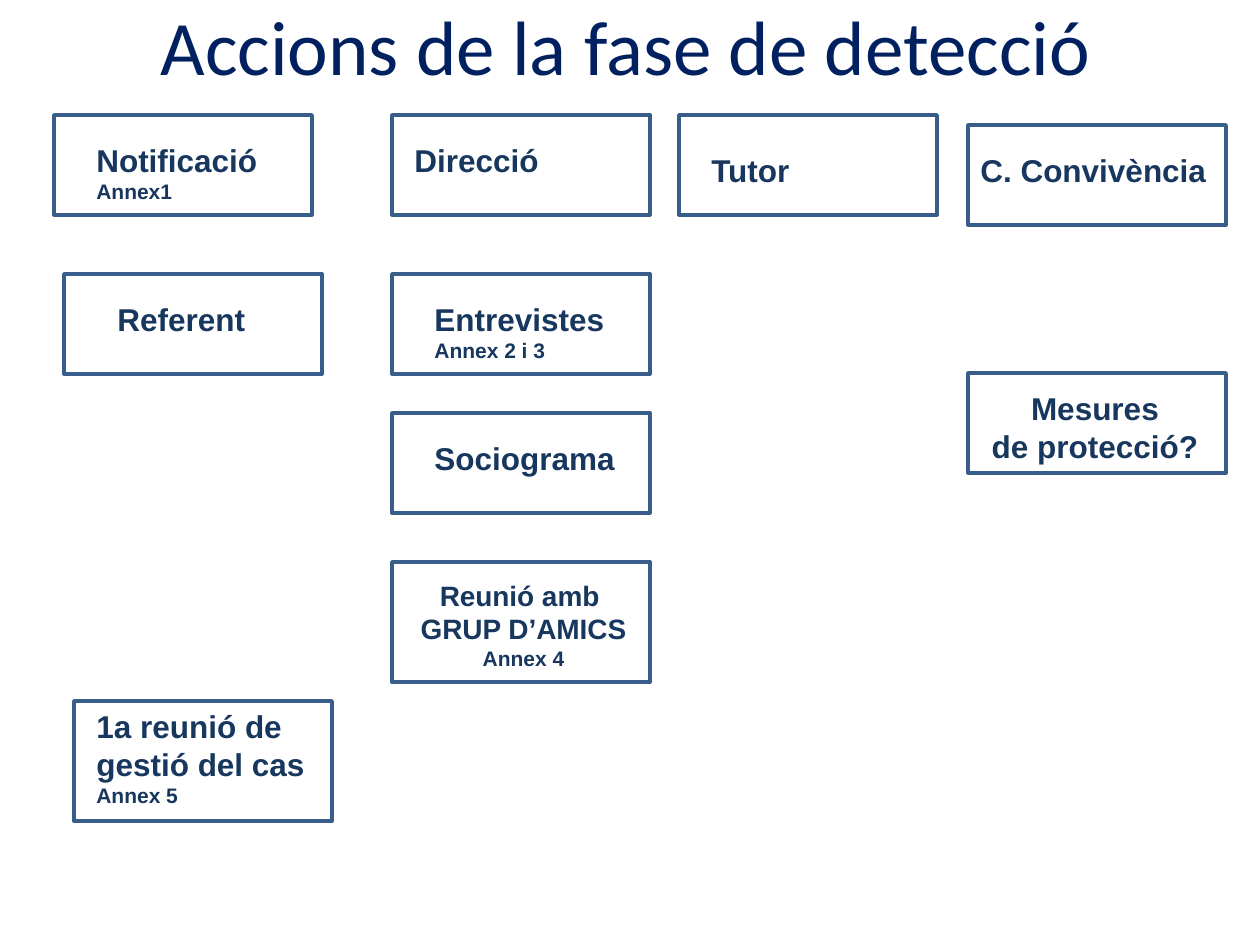
from pptx import Presentation
from pptx.dml.color import RGBColor
from pptx.enum.shapes import MSO_SHAPE
from pptx.enum.text import MSO_ANCHOR, PP_ALIGN
from pptx.util import Inches, Pt

RECTANGLE = MSO_SHAPE.RECTANGLE
MIDDLE = MSO_ANCHOR.MIDDLE
LEFT, CENTER = PP_ALIGN.LEFT, PP_ALIGN.CENTER
BORDER_BLUE = RGBColor(0x38, 0x5D, 0x8A)
TEXT_BLUE = RGBColor(0x17, 0x37, 0x5E)
TITLE_BLUE = RGBColor(0x00, 0x20, 0x60)

SCALE = Inches(1) / 126
BOX_WIDTH = 258
BOX_HEIGHT, TALL_BOX_HEIGHT = 100, 120


def px(*lengths):
    return [round(length * SCALE) for length in lengths]


def add_run(paragraph, text, font_name, size, color, bold):
    run = paragraph.add_run()
    run.text = text
    run.font.name = font_name
    run.font.size = Pt(size)
    run.font.color.rgb = color
    run.font.bold = bold


presentation = Presentation()
presentation.slide_width = Inches(10)
presentation.slide_height = Inches(7.5)
slide = presentation.slides.add_slide(presentation.slide_layouts[5])

title = slide.shapes.title
title.left, title.top, title.width, title.height = px(59, 20, 1134, 50)
title.text_frame.vertical_anchor = MIDDLE
title_paragraph = title.text_frame.paragraphs[0]
title_paragraph.alignment = CENTER
add_run(title_paragraph, "Accions de la fase de detecció", "Calibri", 44, TITLE_BLUE, False)

actions = [
    (54, 115, BOX_HEIGHT, (84, 135, 188, 77), LEFT, [("Notificació", 18), ("Annex1", 12)]),
    (392, 115, BOX_HEIGHT, (402, 135, 151, 89), LEFT, [("Direcció", 18)]),
    (679, 115, BOX_HEIGHT, (699, 145, 149, 50), LEFT, [("Tutor", 18)]),
    (968, 125, BOX_HEIGHT, (968, 145, 253, 50), LEFT, [("C. Convivència", 18)]),
    (64, 274, BOX_HEIGHT, (105, 294, 155, 50), LEFT, [("Referent", 18)]),
    (392, 274, BOX_HEIGHT, (422, 294, 197, 77), LEFT, [("Entrevistes", 18), ("Annex 2 i 3", 12)]),
    (392, 413, BOX_HEIGHT, (422, 433, 208, 50), LEFT, [("Sociograma", 18)]),
    (968, 373, BOX_HEIGHT, (978, 383, 234, 89), CENTER, [("Mesures", 18), ("de protecció?", 18)]),
    (392, 562, TALL_BOX_HEIGHT, (407, 572, 233, 140), CENTER,
     [("Reunió amb ", 16), ("GRUP D’AMICS", 16), ("Annex 4", 12)]),
    (74, 701, TALL_BOX_HEIGHT, (84, 701, 236, 115), LEFT,
     [("1a reunió de", 18), ("gestió del cas", 18), ("Annex 5", 12)]),
]

for left, top, height, label_area, alignment, lines in actions:
    box = slide.shapes.add_shape(RECTANGLE, *px(left, top, BOX_WIDTH, height))
    box.shadow.inherit = False
    box.fill.background()
    box.line.color.rgb = BORDER_BLUE
    box.line.width = Pt(2)

    label = slide.shapes.add_textbox(*px(*label_area))
    text_frame = label.text_frame
    text_frame.word_wrap = False
    for index, (text, size) in enumerate(lines):
        paragraph = text_frame.add_paragraph() if index else text_frame.paragraphs[0]
        paragraph.alignment = alignment
        add_run(paragraph, text, "Arial", size, TEXT_BLUE, True)

presentation.save("out.pptx")
